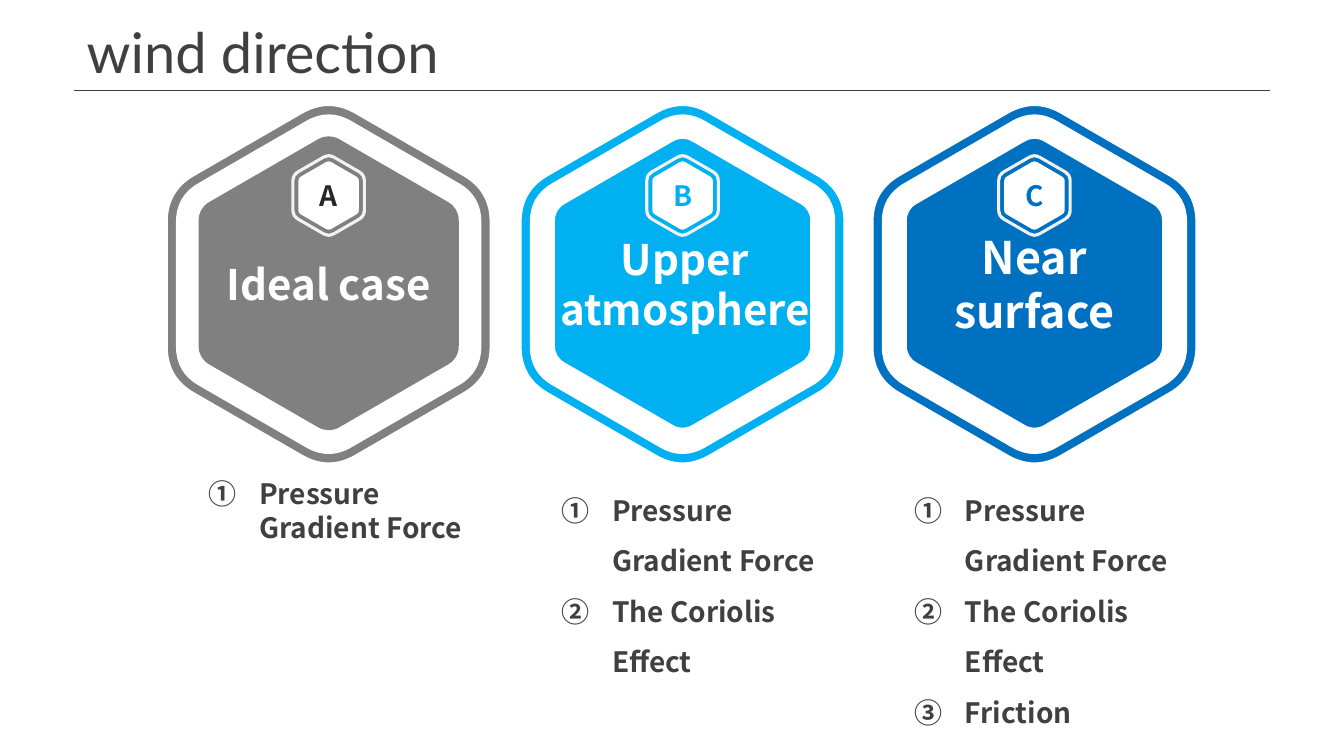
from dataclasses import dataclass
from math import cos, pi, sin

from lxml import etree
from pptx import Presentation
from pptx.dml.color import RGBColor
from pptx.enum.shapes import MSO_CONNECTOR
from pptx.enum.text import MSO_ANCHOR, MSO_AUTO_SIZE, PP_ALIGN
from pptx.oxml.ns import qn
from pptx.util import Inches, Pt

STRAIGHT = MSO_CONNECTOR.STRAIGHT
TOP, MIDDLE, BOTTOM = MSO_ANCHOR.TOP, MSO_ANCHOR.MIDDLE, MSO_ANCHOR.BOTTOM
LEFT, CENTER = PP_ALIGN.LEFT, PP_ALIGN.CENTER
NO_AUTOFIT, GROW = MSO_AUTO_SIZE.NONE, MSO_AUTO_SIZE.SHAPE_TO_FIT_TEXT


@dataclass(frozen=True)
class Theme:
    ink: str = "404040"
    dark: str = "262626"
    white: str = "FFFFFF"
    pale: str = "F2F2F2"
    gray: str = "808080"
    sky: str = "00B0F0"
    blue: str = "0070C0"
    title_font: str = "Lato"
    body_font: str = "Noto Sans CJK SC"
    title_size: int = 40
    body_size: int = 20
    outline: float = 3.5
    rule: float = 0.5


@dataclass(frozen=True)
class Hexagon:
    half_width: float
    side: float
    center_y: float


@dataclass(frozen=True)
class Case:
    letter: str
    label: str
    forces: tuple[str, ...]
    center_x: float
    color: str
    letter_color: str
    label_size: int
    label_left: float
    label_width: float
    inner_outline: bool
    line_spacing: float
    list_left: float
    list_height: float
    holder: int


THEME = Theme()
FRAME = (Hexagon(1.62, 1.24, 2.82), Hexagon(1.49, 1.24, 2.82))
BODY = Hexagon(1.29, 1.24, 2.81)
BADGE_FRAME = (Hexagon(0.37, 0.29, 1.94), Hexagon(0.34, 0.29, 1.94))
BADGE = Hexagon(0.3, 0.29, 1.94)
FORCES = ("Pressure Gradient Force", "The Coriolis Effect", "Friction")
CASES = (
    Case("A", "Ideal case", FORCES[:1], 3.26, THEME.gray, THEME.dark,
         30, 1.84, 2.84, False, 1.0, 1.97, 0.77, 1),
    Case("B", "Upper atmosphere", FORCES[:2], 6.77, THEME.sky, THEME.sky,
         30, 5.28, 3.03, True, 1.5, 5.47, 2.06, 2),
    Case("C", "Near surface", FORCES, 10.26, THEME.blue, THEME.blue,
         32, 8.84, 2.84, True, 1.5, 8.97, 2.57, 3),
)


def place(shape, left: float, top: float, width: float, height: float) -> None:
    box = {"left": left, "top": top, "width": width, "height": height}
    for name, value in box.items():
        setattr(shape, name, Inches(value))


def write(p, text: str, size: int, color: str, font: str = THEME.body_font,
          bold: bool = True, **layout) -> None:
    r = p.add_run()
    r.text = text
    for name, value in {"name": font, "size": Pt(size), "bold": bold}.items():
        setattr(r.font, name, value)
    r.font.color.rgb = RGBColor.from_string(color)
    for name, value in layout.items():
        setattr(p, name, value)


def setup_frame(tf, anchor, fit=NO_AUTOFIT) -> None:
    settings = {"word_wrap": True, "auto_size": fit, "vertical_anchor": anchor}
    for name, value in settings.items():
        setattr(tf, name, value)


def corner_points(hexagon: Hexagon, center_x: float) -> list:
    radius = hexagon.half_width / cos(pi / 6)
    cut = (radius - hexagon.side) / 2 / radius
    corners = [(center_x + radius * sin(i * pi / 3),
                hexagon.center_y - radius * cos(i * pi / 3)) for i in range(6)]
    points = []
    for i, corner in enumerate(corners):
        before, after = corners[i - 1], corners[(i + 1) % 6]
        for neighbor, share in ((before, cut), (before, cut / 3),
                                (after, cut / 3), (after, cut)):
            points.append(tuple(Inches(c + share * (n - c))
                                for c, n in zip(corner, neighbor)))
    return points


def round_corners(shape) -> None:
    lines = list(shape._element.iter(qn("a:lnTo")))
    per_contour = 23
    for start in range(0, len(lines), per_contour):
        contour = lines[start:start + per_contour]
        for i in range(0, per_contour, 4):
            curve = etree.Element(qn("a:cubicBezTo"))
            contour[i].addprevious(curve)
            for line in contour[i:i + 3]:
                curve.append(line[0])
                line.getparent().remove(line)


def draw_hexagon(shapes, outlines: tuple[Hexagon, ...], center_x: float,
                 fill: str, outlined: bool = False):
    contours = [corner_points(outline, center_x) for outline in outlines]
    builder = shapes.build_freeform(*contours[0][0])
    builder.add_line_segments(contours[0][1:], close=True)
    for hole in contours[1:]:
        hole.reverse()
        builder.move_to(*hole[0])
        builder.add_line_segments(hole[1:], close=True)
    shape = builder.convert_to_shape()
    round_corners(shape)
    shape.shadow.inherit = False
    shape.fill.solid()
    shape.fill.fore_color.rgb = RGBColor.from_string(fill)
    if outlined:
        shape.line.color.rgb = RGBColor.from_string(THEME.white)
        shape.line.width = Pt(THEME.outline)
    else:
        shape.line.fill.background()
    return shape


def draw_case(s, case: Case) -> None:
    shapes = s.shapes.add_group_shape().shapes
    x = case.center_x
    draw_hexagon(shapes, FRAME, x, case.color, True)
    draw_hexagon(shapes, (BODY,), x, case.color, case.inner_outline)
    label = shapes.add_textbox(0, 0, 0, 0)
    place(label, case.label_left, 2.47, case.label_width, 0.69)
    setup_frame(label.text_frame, MIDDLE)
    write(label.text_frame.paragraphs[0], case.label, case.label_size,
          THEME.white, alignment=CENTER)
    draw_hexagon(shapes, BADGE_FRAME, x, THEME.pale)
    tf = draw_hexagon(shapes, (BADGE,), x, THEME.white).text_frame
    setup_frame(tf, MIDDLE)
    for margin in ("margin_left", "margin_right", "margin_top", "margin_bottom"):
        setattr(tf, margin, 0)
    write(tf.paragraphs[0], case.letter, THEME.body_size, case.letter_color,
          alignment=CENTER)


def number_paragraph(p) -> None:
    pPr = p._p.get_or_add_pPr()
    for name, value in {"marL": Inches(0.5), "indent": Inches(-0.5)}.items():
        pPr.set(name, str(value))
    etree.SubElement(pPr, qn("a:buFont")).set("typeface", THEME.body_font)
    etree.SubElement(pPr, qn("a:buAutoNum")).set("type", "circleNumDbPlain")


def fill_list(s, case: Case) -> None:
    sp = s.placeholders[case.holder]
    place(sp, case.list_left, 4.68, 2.91, case.list_height)
    tf = sp.text_frame
    setup_frame(tf, TOP, GROW)
    for i, force in enumerate(case.forces):
        p = tf.add_paragraph() if i else tf.paragraphs[0]
        write(p, force, THEME.body_size, THEME.ink, alignment=LEFT,
              line_spacing=case.line_spacing, space_before=Pt(0))
        number_paragraph(p)


def draw_heading(s) -> None:
    title = s.shapes.title
    place(title, 0.76, 0.13, 11.43, 0.77)
    setup_frame(title.text_frame, BOTTOM)
    write(title.text_frame.paragraphs[0], "wind direction", THEME.title_size,
          THEME.ink, THEME.title_font, False, alignment=LEFT, line_spacing=0.9)
    rule = s.shapes.add_connector(STRAIGHT, Inches(0.73), Inches(0.9),
                                  Inches(12.6), Inches(0.9))
    rule.line.color.rgb = RGBColor.from_string(THEME.ink)
    rule.line.width = Pt(THEME.rule)
    etree.SubElement(rule._element.spPr, qn("a:effectLst"))


def main() -> None:
    prs = Presentation()
    prs.slide_width, prs.slide_height = Inches(13.33), Inches(7.5)
    s = prs.slides.add_slide(prs.slide_layouts[4])
    draw_heading(s)
    for case in CASES:
        draw_case(s, case)
        fill_list(s, case)
    spare = s.placeholders[4]._element
    spare.getparent().remove(spare)
    prs.save("out.pptx")


if __name__ == "__main__":
    main()
